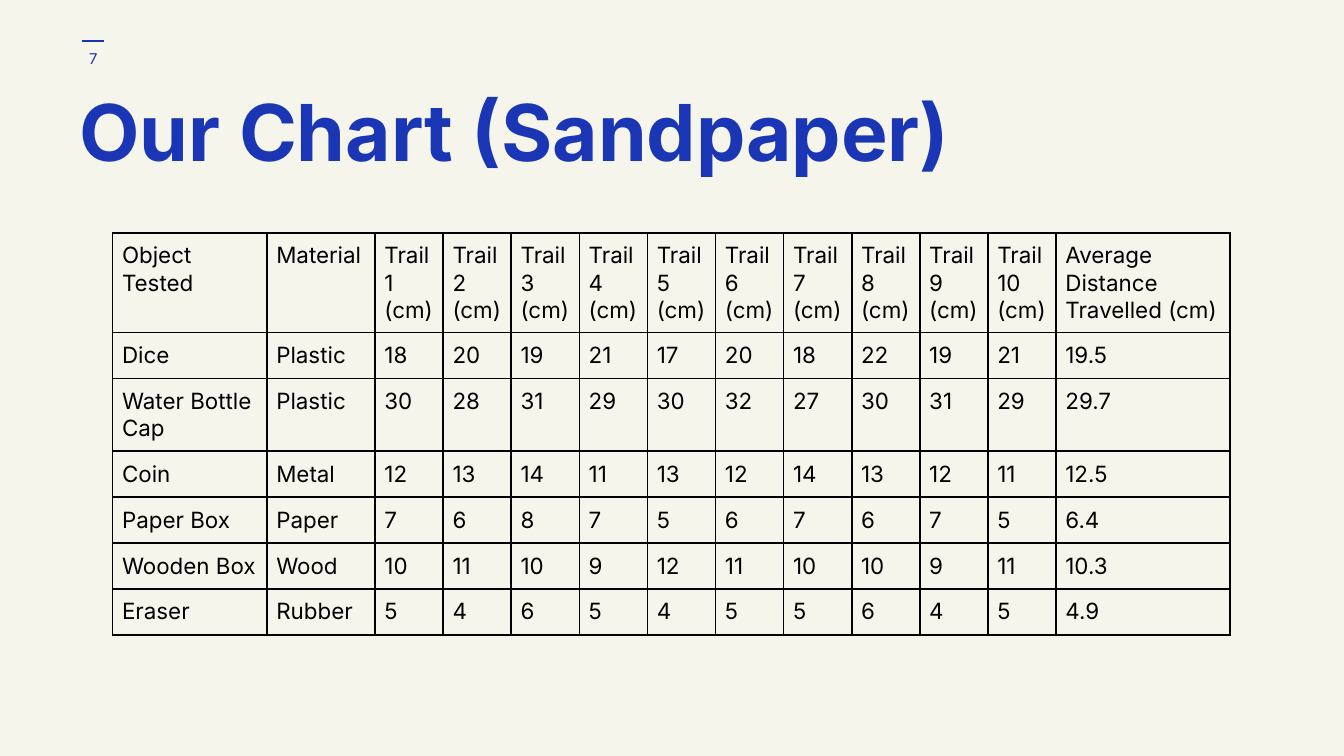
from lxml.etree import SubElement
from pptx import Presentation
from pptx.dml.color import RGBColor
from pptx.enum.shapes import MSO_CONNECTOR
from pptx.enum.text import MSO_ANCHOR, PP_ALIGN
from pptx.oxml import parse_xml
from pptx.oxml.ns import nsdecls, qn
from pptx.util import Inches, Pt

WIDTH = 10
HEIGHT = WIDTH * 9 / 16
BLUE, CREAM, BLACK = "1A36B4", "F6F5EC", "000000"
FONT = "Inter"
TRAILS = 10
HEADER = ["Object Tested", "Material",
          *(f"Trail {n} (cm)" for n in range(1, TRAILS + 1)),
          "Average Distance Travelled (cm)"]
RESULTS = [
    ("Dice", "Plastic", 18, 20, 19, 21, 17, 20, 18, 22, 19, 21, 19.5),
    ("Water Bottle Cap", "Plastic", 30, 28, 31, 29, 30, 32, 27, 30, 31, 29, 29.7),
    ("Coin", "Metal", 12, 13, 14, 11, 13, 12, 14, 13, 12, 11, 12.5),
    ("Paper Box", "Paper", 7, 6, 8, 7, 5, 6, 7, 6, 7, 5, 6.4),
    ("Wooden Box", "Wood", 10, 11, 10, 9, 12, 11, 10, 10, 9, 11, 10.3),
    ("Eraser", "Rubber", 5, 4, 6, 5, 4, 5, 5, 6, 4, 5, 4.9),
]
COLUMN_SHARES = [11.48, 8.05] + [5.07] * TRAILS + [12.95]
ROW_SHARES = [13.2, 6.07, 9.63] + [6.07] * 4


def x(share):
    """Turn a percentage of the slide's width into a length."""
    return Inches(WIDTH * share / 100)


def y(share):
    """Turn a percentage of the slide's height into a length."""
    return Inches(HEIGHT * share / 100)


def color(hex_code):
    """Turn a hex string into a colour."""
    return RGBColor.from_string(hex_code)


def add_run(p, text, size, hex_code, bold=False):
    """Append one formatted run to a paragraph."""
    r = p.add_run()
    r.text = text
    r.font.name = FONT
    r.font.size = Pt(size)
    r.font.bold = bold
    r.font.color.rgb = color(hex_code)


def set_margins(box, margin):
    """Give a text frame or cell the same margin on all sides."""
    box.margin_left = box.margin_right = margin
    box.margin_top = box.margin_bottom = margin


def add_text(s, left, top, width, height, anchor=MSO_ANCHOR.TOP):
    """Add a wrapping text box and return its first paragraph."""
    tf = s.shapes.add_textbox(x(left), y(top), x(width), y(height)).text_frame
    tf.word_wrap = True
    tf.vertical_anchor = anchor
    set_margins(tf, Inches(0.1))
    return tf.paragraphs[0]


def add_rule(s, start, end, top):
    """Draw a thin horizontal line."""
    line = s.shapes.add_connector(MSO_CONNECTOR.STRAIGHT, x(start), y(top), x(end), y(top))
    line.line.color.rgb = color(BLUE)
    line.line.width = Pt(0.75)
    SubElement(line._element.spPr, qn("a:effectLst"))


def add_borders(cell):
    """Outline a cell with one-point black lines."""
    tc_pr = cell._tc.get_or_add_tcPr()
    for i, side in enumerate("LRTB"):
        tc_pr.insert(i, parse_xml(
            f'<a:ln{side} {nsdecls("a")} w="{Pt(1)}"><a:solidFill>'
            f'<a:srgbClr val="{BLACK}"/></a:solidFill></a:ln{side}>'))


def fill_cell(cell, value):
    """Write one value into a clear, bordered cell."""
    set_margins(cell, Inches(0.07))
    cell.fill.background()
    add_borders(cell)
    add_run(cell.text_frame.paragraphs[0], str(value), 12, BLACK)


def add_results_table(s, left, top):
    """Add the table of distances."""
    rows = [HEADER, *RESULTS]
    table = s.shapes.add_table(len(rows), len(HEADER), x(left), y(top),
                               x(sum(COLUMN_SHARES)), y(sum(ROW_SHARES))).table
    table.first_row = table.horz_banding = False
    for column, share in zip(table.columns, COLUMN_SHARES):
        column.width = x(share)
    for row, share, values in zip(table.rows, ROW_SHARES, rows):
        row.height = y(share)
        for cell, value in zip(row.cells, values):
            fill_cell(cell, value)


def main():
    """Build and save the slide."""
    prs = Presentation()
    prs.slide_width, prs.slide_height = x(100), y(100)
    s = prs.slides.add_slide(prs.slide_layouts[6])
    s.background.fill.solid()
    s.background.fill.fore_color.rgb = color(CREAM)

    add_rule(s, 6.1, 7.75, 5.45)
    title = add_text(s, 4.93, 11.63, 72.7, 12.1)
    title.line_spacing = 0.8
    add_run(title, "Our Chart (Sandpaper)", 42, BLUE, bold=True)
    number = add_text(s, 4.6, 3.9, 4.7, 7.65, MSO_ANCHOR.MIDDLE)
    number.alignment = PP_ALIGN.CENTER
    add_run(number, "7", 8, BLUE)
    add_results_table(s, 8.38, 30.8)
    prs.save("out.pptx")


if __name__ == "__main__":
    main()
